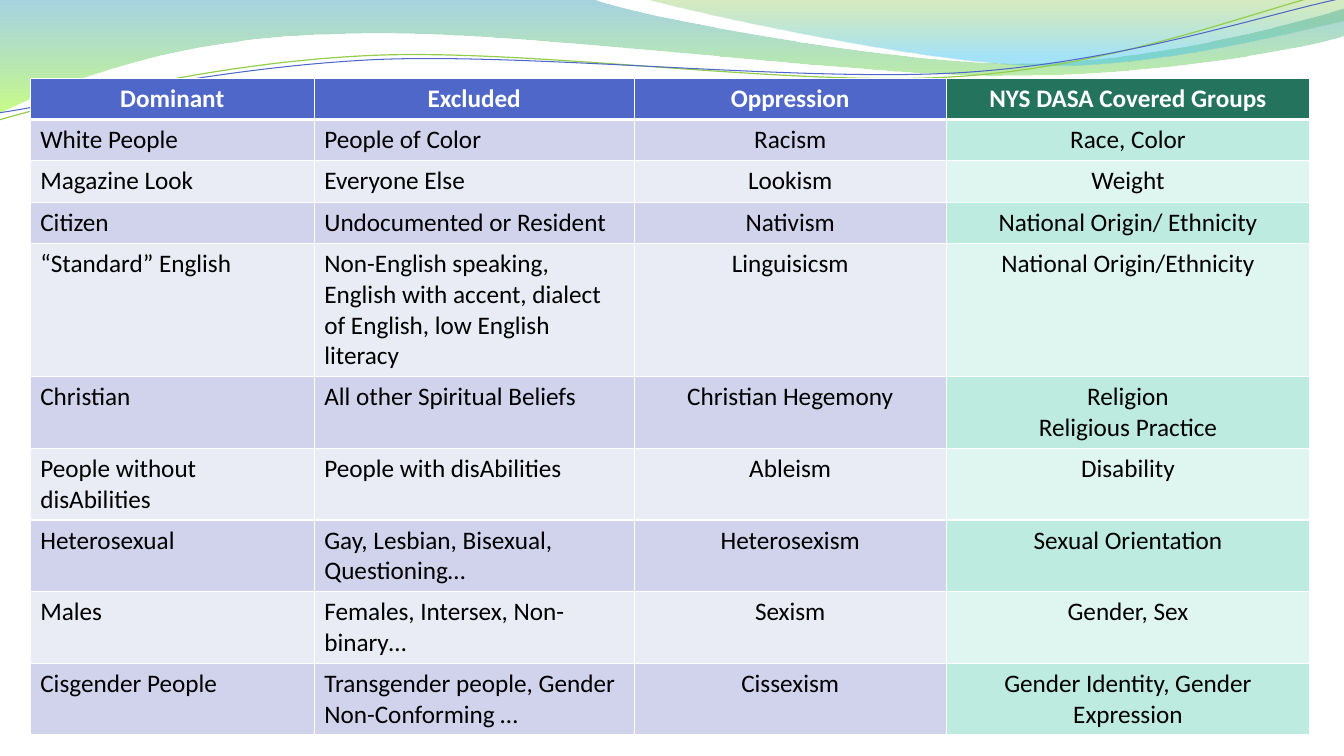
import math
from dataclasses import dataclass

from lxml import etree
from pptx import Presentation
from pptx import util as u
from pptx.dml.color import RGBColor
from pptx.enum import text
from pptx.oxml import parse_xml
from pptx.oxml.ns import nsdecls, qn

SLIDE_WIDTH, SLIDE_HEIGHT = u.Inches(13.33), u.Inches(7.5)
Point = tuple[float, float]


@dataclass
class Stop:
    position: int
    color: str
    opacity: int


@dataclass
class Wave:
    """Outline in inches: a step of two numbers is a line, of six a Bézier curve."""
    start: Point
    steps: list[tuple[float, ...]]
    gradient: tuple[Stop, ...] = ()
    line_color: str = ""
    line_width: float = 0
    tilt: float = 0
    pivot: Point = (0, 0)


@dataclass
class Column:
    heading: str
    width: float
    align: text.PP_ALIGN
    heading_fill: str
    band_fills: tuple[str, str]


BLUE = ("4E67C8", ("D0D3EB", "E9EBF5"))
GREEN = ("23735D", ("BEEBDF", "DFF5EF"))
LEFT, CENTER = text.PP_ALIGN.LEFT, text.PP_ALIGN.CENTER

# Column widths are percentages of the table's width.
COLUMNS = [
    Column("Dominant", 22.2, LEFT, *BLUE),
    Column("Excluded", 25, LEFT, *BLUE),
    Column("Oppression", 24.4, CENTER, *BLUE),
    Column("NYS DASA Covered Groups", 28.4, CENTER, *GREEN),
]
GROUPS = [
    ("White People", "People of Color", "Racism", "Race, Color"),
    ("Magazine Look", "Everyone Else", "Lookism", "Weight"),
    ("Citizen", "Undocumented or Resident", "Nativism", "National Origin/ Ethnicity"),
    ("“Standard” English",
     "Non-English speaking, English with accent, dialect of English, low English literacy",
     "Linguisicsm", "National Origin/Ethnicity"),
    ("Christian", "All other Spiritual Beliefs", "Christian Hegemony",
     "Religion\nReligious Practice"),
    ("People without disAbilities", "People with disAbilities", "Ableism", "Disability"),
    ("Heterosexual", "Gay, Lesbian, Bisexual, Questioning…", "Heterosexism",
     "Sexual Orientation"),
    ("Males", "Females, Intersex, Non-binary…", "Sexism", "Gender, Sex"),
    ("Cisgender People", "Transgender people, Gender Non-Conforming …", "Cissexism",
     "Gender Identity, Gender Expression"),
]
WAVES = [
    Wave((0, 0), [(5.87, -0.01), (6.34, 0.17, 8.84, 0.63, 10.11, 0.63),
                  (11.37, 0.63, 12.77, 0.26, 13.33, 0.09), (13.34, 0.36),
                  (13.11, 0.44, 11.59, 0.76, 9.94, 0.75),
                  (8.29, 0.75, 5.09, 0.28, 3.43, 0.34),
                  (1.72, 0.36, 0.61, 0.83, -0.02, 1.13), (0, 0)],
         gradient=(Stop(0, "3B9CBF", 45), Stop(100, "9CFA24", 55))),
    Wave((6.38, -0.01), [(6.79, 0.11, 9.09, 0.62, 10.25, 0.65),
                         (11.4, 0.69, 12.82, 0.32, 13.33, 0.21),
                         (13.33, 0), (6.38, -0.01)],
         gradient=(Stop(0, "7EBE2C", 30), Stop(80, "39C1F1", 45))),
    Wave((-0.01, 1.19), [(0.63, 1.01, 2.1, 0.62, 3.69, 0.55),
                         (5.27, 0.48, 7.89, 0.87, 9.49, 0.76),
                         (11.1, 0.66, 12.51, 0.08, 13.3, -0.1)],
         line_color="93CE48", line_width=0.85, tilt=-2.7, pivot=(6.65, 0.58)),
    Wave((-0.01, 1.12), [(0.62, 1.03, 2.18, 0.66, 3.77, 0.59),
                         (5.37, 0.53, 7.96, 0.82, 9.55, 0.72),
                         (11.14, 0.62, 12.55, 0.14, 13.33, -0.02)],
         line_color="4E67C8", line_width=0.75, tilt=-2.7, pivot=(6.67, 0.59)),
]


def rgb(color: str) -> RGBColor:
    return RGBColor.from_string(color)


def across(percent: float) -> int:
    return round(SLIDE_WIDTH * percent / 100)


def down(percent: float) -> int:
    return round(SLIDE_HEIGHT * percent / 100)


def level_point(wave: Wave, x: float, y: float) -> tuple[int, int]:
    """Take the wave's tilt out of a point, as the shape's rotation restores it."""
    angle = math.radians(-wave.tilt)
    dx, dy = x - wave.pivot[0], y - wave.pivot[1]
    return (u.Inches(wave.pivot[0] + dx * math.cos(angle) - dy * math.sin(angle)),
            u.Inches(wave.pivot[1] + dx * math.sin(angle) + dy * math.cos(angle)))


def bend_lines(shape, steps: list[tuple[float, ...]]) -> None:
    """Join each three line segments of a six-number step into one Bézier curve."""
    segments = iter(list(shape._element.iter(qn("a:lnTo"))))
    for step in steps:
        first = next(segments)
        if len(step) == 6:
            curve = etree.Element(qn("a:cubicBezTo"))
            first.addprevious(curve)
            for segment in (first, next(segments), next(segments)):
                curve.append(segment[0])
                segment.getparent().remove(segment)


def fill_downward(shape, stops: tuple[Stop, ...]) -> None:
    """Fill from top to bottom with translucent gradient stops."""
    stop_xml = "".join(
        f'<a:gs pos="{stop.position * 1000}"><a:srgbClr val="{stop.color}">'
        f'<a:alpha val="{stop.opacity * 1000}"/></a:srgbClr></a:gs>' for stop in stops)
    gradient = parse_xml(f'<a:gradFill {nsdecls("a")} rotWithShape="1"><a:gsLst>{stop_xml}'
                         '</a:gsLst><a:lin ang="5400000" scaled="0"/></a:gradFill>')
    shape._element.spPr.find(qn("a:custGeom")).addnext(gradient)


def draw_wave(slide, wave: Wave) -> None:
    builder = slide.shapes.build_freeform(*level_point(wave, *wave.start))
    points = [level_point(wave, *step[i:i + 2])
              for step in wave.steps for i in range(0, len(step), 2)]
    builder.add_line_segments(points, close=bool(wave.gradient))
    shape = builder.convert_to_shape()
    bend_lines(shape, wave.steps)
    shape.rotation = wave.tilt
    shape.shadow.inherit = False
    if wave.gradient:
        shape.line.fill.background()
        fill_downward(shape, wave.gradient)
    else:
        shape.fill.background()
        shape.line.color.rgb = rgb(wave.line_color)
        shape.line.width = u.Pt(wave.line_width)


def set_borders(cell, widths: dict[str, float]) -> None:
    properties = cell._tc.get_or_add_tcPr()
    for side, width in widths.items():
        border = etree.SubElement(properties, qn(f"a:{side}"), w=str(u.Pt(width)))
        solid = etree.SubElement(border, qn("a:solidFill"))
        etree.SubElement(solid, qn("a:srgbClr"), val="FFFFFF")


def write_cell(cell, wording: str, row: int, column: Column) -> None:
    heading = row == 0
    set_borders(cell, {"lnL": 1, "lnR": 1, "lnT": 3 if row == 1 else 1,
                       "lnB": 3 if heading else 1})
    cell.fill.solid()
    cell.fill.fore_color.rgb = rgb(
        column.heading_fill if heading else column.band_fills[(row - 1) % 2])
    cell.text = wording
    font_format = {"name": "Calibri", "size": u.Pt(18), "bold": heading}
    for paragraph in cell.text_frame.paragraphs:
        paragraph.alignment = CENTER if heading else column.align
        for run in paragraph.runs:
            for attribute, value in font_format.items():
                setattr(run.font, attribute, value)
            run.font.color.rgb = rgb("FFFFFF" if heading else "000000")


def add_groups_table(slide) -> None:
    rows = [tuple(column.heading for column in COLUMNS), *GROUPS]
    width = across(95.2)
    table = slide.shapes.add_table(len(rows), len(COLUMNS), across(2.25), down(10.4),
                                   width, down(53.4)).table
    for index, column in enumerate(COLUMNS):
        table.columns[index].width = round(width * column.width / 100)
    for row, wordings in enumerate(rows):
        table.rows[row].height = down(5.47 if row else 4.13)
        for index, (wording, column) in enumerate(zip(wordings, COLUMNS)):
            write_cell(table.cell(row, index), wording, row, column)


def main() -> None:
    deck = Presentation()
    deck.slide_width, deck.slide_height = SLIDE_WIDTH, SLIDE_HEIGHT
    slide = deck.slides.add_slide(deck.slide_layouts[6])
    for wave in WAVES:
        draw_wave(slide, wave)
    add_groups_table(slide)
    deck.save("out.pptx")


if __name__ == "__main__":
    main()
